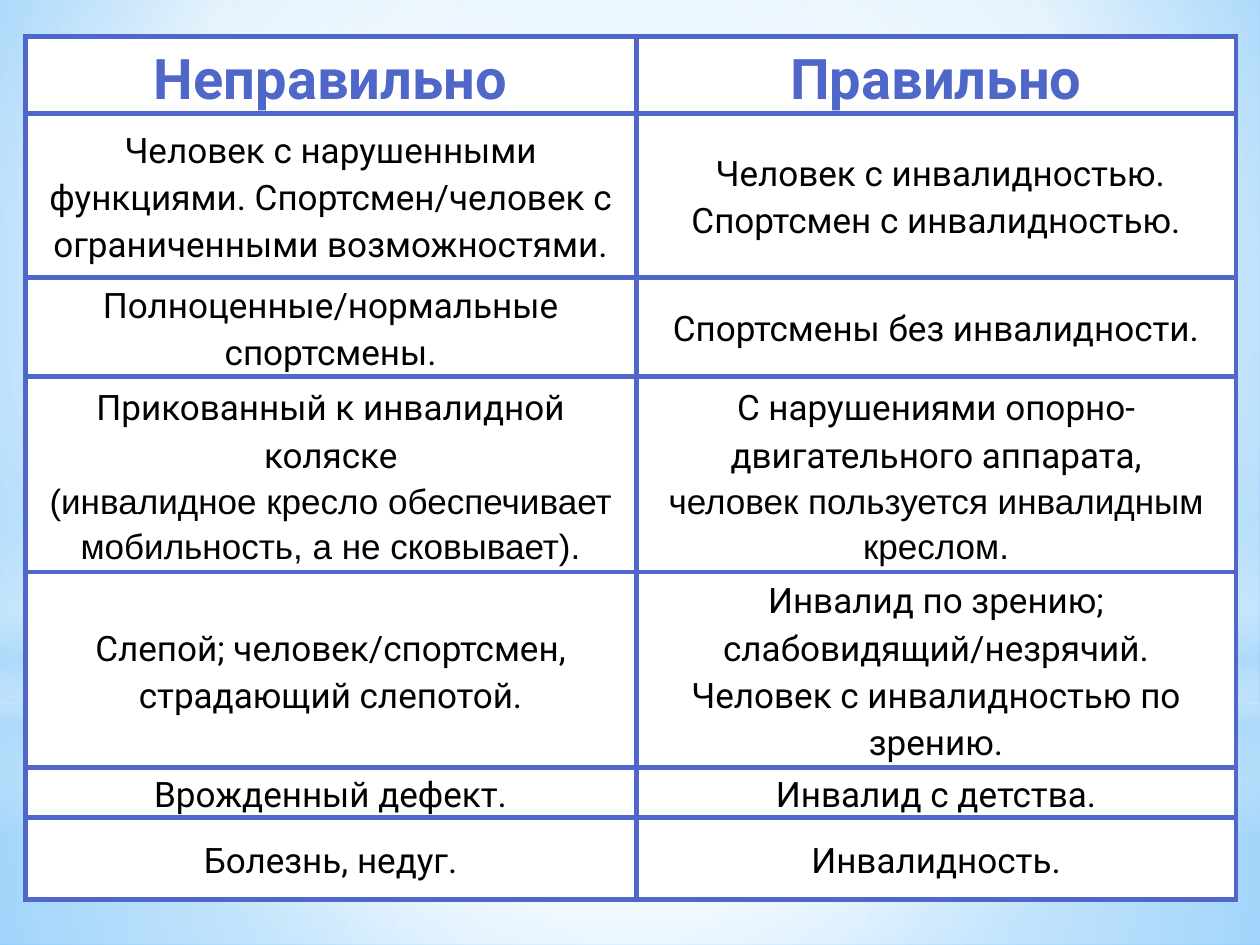
from dataclasses import dataclass
from typing import Any

from lxml.etree import SubElement
from pptx import Presentation
from pptx.dml.color import RGBColor
from pptx.enum.shapes import MSO_SHAPE
from pptx.enum.text import MSO_ANCHOR, PP_ALIGN
from pptx.oxml.ns import qn
from pptx.util import Inches, Pt

BLUE = RGBColor(0x4E, 0x67, 0xC8)
WHITE = RGBColor(0xFF, 0xFF, 0xFF)
BLACK = RGBColor(0, 0, 0)
SKY = RGBColor(0x9E, 0xD5, 0xFF)
DEEP_SKY = RGBColor(0x5B, 0xB9, 0xFF)
MIST = RGBColor(0xB4, 0xDC, 0xFA)
CENTER = (50, 50, 50, 50)


@dataclass
class Stop:
    position: int
    color: RGBColor
    opacity: int = 100


@dataclass
class Glow:
    preset: MSO_SHAPE
    top: float
    height: float
    stops: list[Stop]
    focus: tuple[int, ...] | None = CENTER


@dataclass
class Part:
    text: str
    font: str = "Roboto"


BACKDROP = [Stop(0, SKY), Stop(60, WHITE), Stop(100, DEEP_SKY)]
GLOWS = [
    Glow(MSO_SHAPE.RECTANGLE, 5.58, 1.92,
         [Stop(0, WHITE, 91), Stop(37, WHITE, 76), Stop(100, MIST, 79)]),
    Glow(MSO_SHAPE.RECTANGLE, 0, 5.58,
         [Stop(0, WHITE, 89), Stop(48, WHITE, 62), Stop(100, MIST, 79)]),
    Glow(MSO_SHAPE.RECTANGLE, 4.12, 2.5,
         [Stop(0, WHITE, 0), Stop(29, WHITE, 30), Stop(45, MIST, 40),
          Stop(55, WHITE, 26), Stop(65, MIST, 60), Stop(100, WHITE, 0)], None),
    Glow(MSO_SHAPE.OVAL, 1.75, 5.58, [Stop(0, WHITE), Stop(56, WHITE, 0)]),
]

COLUMN_WIDTHS = [4.85, 4.76]
ROW_HEIGHTS = [0.61, 1.3, 0.79, 1.55, 1.55, 0.4, 0.65]
ROWS = [
    ([Part("Неправильно")], [Part("Правильно")]),
    ([Part("Человек с нарушенными функциями. Спортсмен/человек с "
           "ограниченными возможностями.")],
     [Part(" Человек с инвалидностью.\nСпортсмен с инвалидностью.")]),
    ([Part("Полноценные/нормальные спортсмены.")],
     [Part("Спортсмены без инвалидности.")]),
    ([Part("Прикованный к инвалидной коляске"),
      Part("(инвалидное кресло обеспечивает мобильность, а не сковывает).", "Arial")],
     [Part("С нарушениями опорно-двигательного аппарата,"),
      Part("человек пользуется инвалидным креслом.", "Arial")]),
    ([Part("Слепой; человек/спортсмен, страдающий слепотой.")],
     [Part("Инвалид по зрению; слабовидящий/незрячий.\n"
           "Человек с инвалидностью по зрению.")]),
    ([Part("Врожденный дефект.")], [Part("Инвалид с детства.")]),
    ([Part("Болезнь, недуг.")], [Part("Инвалидность.")]),
]
HEADER_FORMAT = {"size": Pt(32), "bold": True}
BODY_FORMAT = {"size": Pt(20), "bold": False}
PARA_FORMAT = {"alignment": PP_ALIGN.CENTER, "line_spacing": 1.15}


def apply_format(target: Any, values: dict[str, Any]) -> None:
    for name, value in values.items():
        setattr(target, name, value)


def add_color(parent: Any, color: RGBColor, opacity: int = 100) -> None:
    tint = SubElement(parent, qn("a:srgbClr"), val=str(color))
    if opacity < 100:
        SubElement(tint, qn("a:alpha"), val=str(opacity * 1000))


def set_gradient(gradient: Any, stops: list[Stop], focus: tuple[int, ...] | None) -> None:
    for child in list(gradient):
        gradient.remove(child)
    stop_list = SubElement(gradient, qn("a:gsLst"))
    for stop in stops:
        node = SubElement(stop_list, qn("a:gs"), pos=str(stop.position * 1000))
        add_color(node, stop.color, stop.opacity)
    if focus is None:
        SubElement(gradient, qn("a:lin"), ang="5400000", scaled="0")
    else:
        shade = SubElement(gradient, qn("a:path"), path="circle")
        sides = {side: str(value * 1000) for side, value in zip("ltrb", focus)}
        SubElement(shade, qn("a:fillToRect"), **sides)


def add_glow(page: Any, glow: Glow) -> None:
    shape = page.shapes.add_shape(
        glow.preset, Inches(0), Inches(glow.top), Inches(10), Inches(glow.height))
    shape.shadow.inherit = False
    shape.line.fill.background()
    shape.fill.gradient()
    set_gradient(shape.element.xpath("./p:spPr/a:gradFill")[0], glow.stops, glow.focus)


def add_borders(cell: Any) -> None:
    properties = cell._tc.get_or_add_tcPr()
    for index, side in enumerate("LRTB"):
        border = SubElement(properties, qn(f"a:ln{side}"), w=str(Pt(3)))
        add_color(SubElement(border, qn("a:solidFill")), BLUE)
        properties.insert(index, border)


def fill_cell(cell: Any, parts: list[Part], is_header: bool) -> None:
    inset = Inches(0 if is_header else 0.01)
    margins = {f"margin_{side}": inset for side in ("left", "right", "top", "bottom")}
    apply_format(cell, {"vertical_anchor": MSO_ANCHOR.MIDDLE, **margins})
    cell.fill.solid()
    cell.fill.fore_color.rgb = WHITE
    add_borders(cell)
    frame = cell.text_frame
    for index, part in enumerate(parts):
        para = frame.add_paragraph() if index else frame.paragraphs[0]
        para.text = part.text
        apply_format(para, PARA_FORMAT)
        for span in para.runs:
            apply_format(span.font, HEADER_FORMAT if is_header else BODY_FORMAT)
            span.font.name = part.font
            span.font.color.rgb = BLUE if is_header else BLACK


def add_terms_table(page: Any) -> None:
    table = page.shapes.add_table(
        len(ROWS), len(COLUMN_WIDTHS), Inches(0.2), Inches(0.29),
        Inches(sum(COLUMN_WIDTHS)), Inches(sum(ROW_HEIGHTS))).table
    for column, width in zip(table.columns, COLUMN_WIDTHS):
        column.width = Inches(width)
    for row_index, (row, height) in enumerate(zip(table.rows, ROW_HEIGHTS)):
        row.height = Inches(height)
        for cell, parts in zip(row.cells, ROWS[row_index]):
            fill_cell(cell, parts, row_index == 0)


def main() -> None:
    deck = Presentation()
    apply_format(deck, {"slide_width": Inches(10), "slide_height": Inches(7.5)})
    page = deck.slides.add_slide(deck.slide_layouts[6])
    page.background.fill.gradient()
    backdrop = page.element.xpath("./p:cSld/p:bg//a:gradFill")[0]
    set_gradient(backdrop, BACKDROP, (20, 10, 20, 60))
    for glow in GLOWS:
        add_glow(page, glow)
    add_terms_table(page)
    deck.save("out.pptx")


if __name__ == "__main__":
    main()
